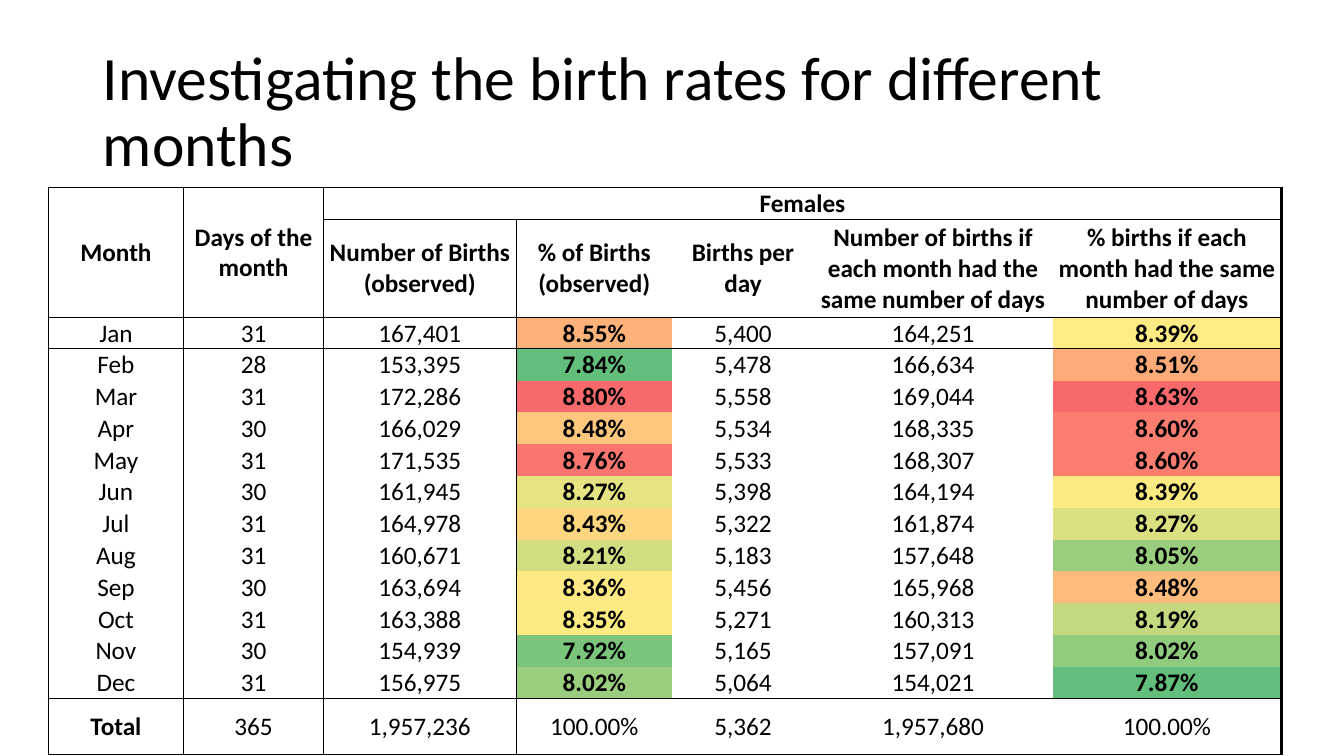
from lxml import etree
from pptx import Presentation
from pptx.dml.color import RGBColor
from pptx.enum.text import MSO_ANCHOR, PP_ALIGN
from pptx.oxml.ns import qn
from pptx.util import Inches, Pt

LEFT, CENTER = PP_ALIGN.LEFT, PP_ALIGN.CENTER
MIDDLE, BOTTOM = MSO_ANCHOR.MIDDLE, MSO_ANCHOR.BOTTOM
BLACK = RGBColor(0x00, 0x00, 0x00)
OBSERVED_HEAT = [RGBColor.from_string(value) for value in (
    "FCB279", "63BE7B", "F8696B", "FEC77D", "F9756E", "E6E382",
    "FED680", "D2DE81", "FFE984", "FCEA83", "7AC47C", "9ACD7E")]
EQUAL_DAYS_HEAT = [RGBColor.from_string(value) for value in (
    "FFEB84", "FCAA78", "F8696B", "FA7D6F", "FA7D6F", "FEEA83",
    "DB" "E081", "9ACD7E", "FDBC7B", "C3D980", "91CB7D", "63BE7B")]
HEAT = {3: OBSERVED_HEAT, 6: EQUAL_DAYS_HEAT}
NO_STYLE = "{2D5ABB26-0587-4C30-8999-92F81FD0307C}"

COLUMN_WIDTHS = [1.34, 1.39, 1.91, 1.55, 1.4, 2.37, 2.27]
ROW_HEIGHTS = [0.28, 0.97] + [0.28] * 12 + [0.56]
VERTICAL_RULES = {0: 1, 1: 0.5, 2: 0.5, 7: 2}
HORIZONTAL_RULES = {0: 1, 1: 0.5, 2: 0.5, 14: 0.5, 15: 1}
ROWS = [
    ["Month", "Days of the month", "Females", "", "", "", ""],
    ["", "", "Number of Births (observed)", "% of Births (observed)", "Births per day",
     "Number of births if each month had the same number of days",
     "% births if each month had the same number of days"],
    ["Jan", "31", "167,401", "8.55%", "5,400", "164,251", "8.39%"],
    ["Feb", "28", "153,395", "7.84%", "5,478", "166,634", "8.51%"],
    ["Mar", "31", "172,286", "8.80%", "5,558", "169,044", "8.63%"],
    ["Apr", "30", "166,029", "8.48%", "5,534", "168,335", "8.60%"],
    ["May", "31", "171,535", "8.76%", "5,533", "168,307", "8.60%"],
    ["Jun", "30", "161,945", "8.27%", "5,398", "164,194", "8.39%"],
    ["Jul", "31", "164,978", "8.43%", "5,322", "161,874", "8.27%"],
    ["Aug", "31", "160,671", "8.21%", "5,183", "157,648", "8.05%"],
    ["Sep", "30", "163,694", "8.36%", "5,456", "165,968", "8.48%"],
    ["Oct", "31", "163,388", "8.35%", "5,271", "160,313", "8.19%"],
    ["Nov", "30", "154,939", "7.92%", "5,165", "157,091", "8.02%"],
    ["Dec", "31", "156,975", "8.02%", "5,064", "154,021", "7.87%"],
    ["Total", "365", "1,957,236", "100.00%", "5,362", "1,957,680", "100.00%"],
]
TOTAL_ROW = len(ROWS) - 1


def format_text(paragraph, size, bold, alignment):
    paragraph.alignment = alignment
    for span in paragraph.runs:
        span.font.name = "Calibri"
        span.font.size = Pt(size)
        span.font.bold = bold
        span.font.color.rgb = BLACK


def add_border(cell, tag, width):
    properties = cell._tc.get_or_add_tcPr()
    line = etree.SubElement(properties, qn(tag), w=str(Pt(width)))
    fill = etree.SubElement(line, qn("a:solidFill"))
    etree.SubElement(fill, qn("a:srgbClr"), val=str(BLACK))


deck = Presentation()
deck.slide_width = Inches(13.33)
deck.slide_height = Inches(7.5)
page = deck.slides.add_slide(deck.slide_layouts[5])

title = page.shapes.title
title.left, title.top = Inches(0.92), Inches(0.4)
title.width, title.height = Inches(11.5), Inches(1.45)
title.text_frame.text = "Investigating the birth rates for different months"
title.text_frame.vertical_anchor = MIDDLE
title.text_frame.paragraphs[0].line_spacing = 0.9
format_text(title.text_frame.paragraphs[0], 44, False, LEFT)

frame = page.shapes.add_table(len(ROWS), len(COLUMN_WIDTHS), Inches(0.48), Inches(1.86),
                              Inches(sum(COLUMN_WIDTHS)), Inches(sum(ROW_HEIGHTS)))
table = frame.table
table.first_row = False
table.horz_banding = False
table._tbl.tblPr.find(qn("a:tableStyleId")).text = NO_STYLE
for column, width in zip(table.columns, COLUMN_WIDTHS):
    column.width = Inches(width)
for row, height in zip(table.rows, ROW_HEIGHTS):
    row.height = Inches(height)
table.cell(0, 0).merge(table.cell(1, 0))
table.cell(0, 1).merge(table.cell(1, 1))
table.cell(0, 2).merge(table.cell(0, 6))

for r, values in enumerate(ROWS):
    for c, value in enumerate(values):
        cell = table.cell(r, c)
        if cell.is_spanned:
            continue
        is_month = 2 <= r < TOTAL_ROW
        cell.text_frame.text = value
        bold = r < 2 or (is_month and c in HEAT) or (r == TOTAL_ROW and c == 0)
        format_text(cell.text_frame.paragraphs[0], 18, bold, CENTER)
        cell.vertical_anchor = BOTTOM if value == "Females" else MIDDLE
        cell.margin_left = cell.margin_top = cell.margin_right = Inches(0.01)
        cell.margin_bottom = Inches(0)
        right = c + (cell.span_width if cell.is_merge_origin else 1)
        below = r + (cell.span_height if cell.is_merge_origin else 1)
        for tag, rules, edge in (("a:lnL", VERTICAL_RULES, c), ("a:lnR", VERTICAL_RULES, right),
                                 ("a:lnT", HORIZONTAL_RULES, r), ("a:lnB", HORIZONTAL_RULES, below)):
            if edge in rules:
                add_border(cell, tag, rules[edge])
        if is_month and c in HEAT:
            cell.fill.solid()
            cell.fill.fore_color.rgb = HEAT[c][r - 2]
        else:
            cell.fill.background()

deck.save("out.pptx")
